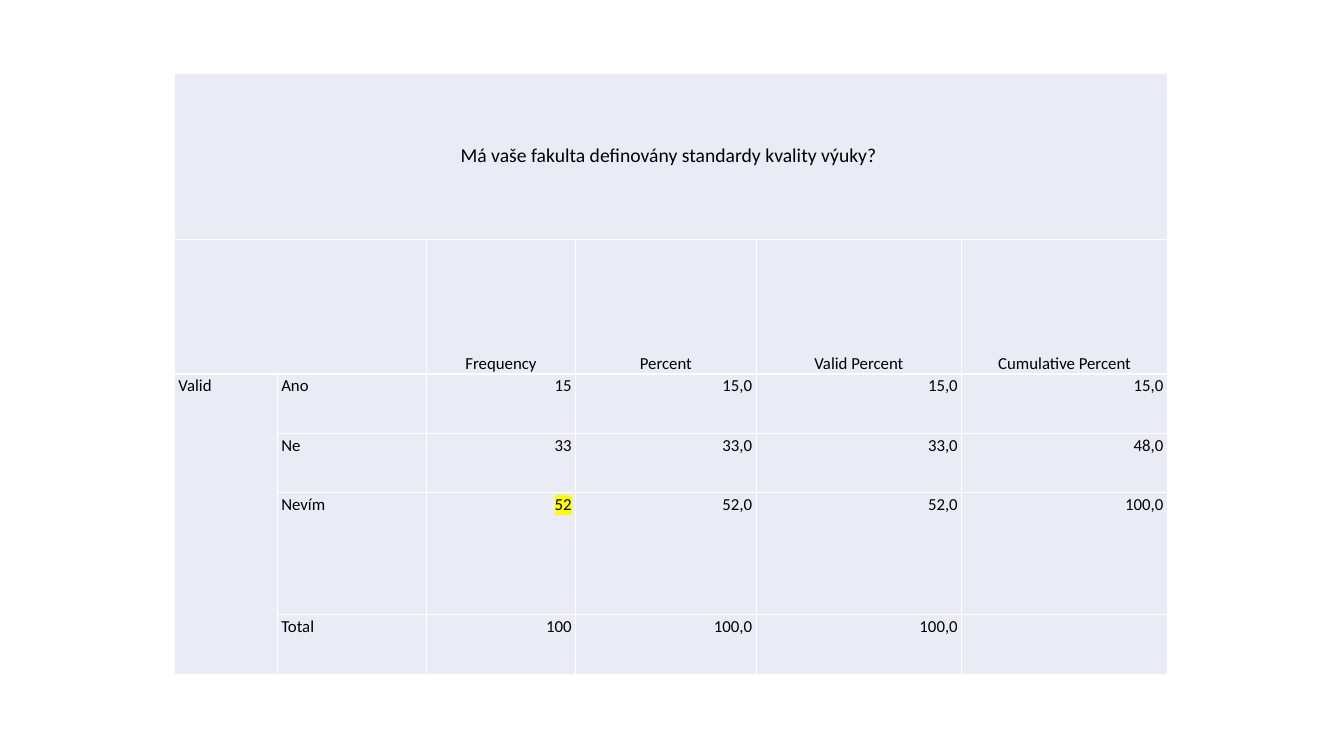
from lxml import etree
from pptx import Presentation
from pptx.dml.color import RGBColor
from pptx.enum.text import MSO_ANCHOR, PP_ALIGN
from pptx.oxml.ns import qn
from pptx.util import Inches, Pt

LEFT, CENTER, RIGHT = PP_ALIGN.LEFT, PP_ALIGN.CENTER, PP_ALIGN.RIGHT
TOP, MIDDLE, BOTTOM = MSO_ANCHOR.TOP, MSO_ANCHOR.MIDDLE, MSO_ANCHOR.BOTTOM
PALE_BLUE = RGBColor(0xE9, 0xEB, 0xF5)
WHITE = RGBColor(0xFF, 0xFF, 0xFF)
BLACK = RGBColor(0x00, 0x00, 0x00)
YELLOW = RGBColor(0xFF, 0xFF, 0x00)

COLUMN_WIDTHS = [1.02, 1.48, 1.48, 1.79, 2.04, 2.04]
ROW_HEIGHTS = [1.65, 1.33, 0.59, 0.59, 1.21, 0.59]
ROWS = [
    ["Má vaše fakulta definovány standardy kvality výuky? ", "", "", "", "", ""],
    ["", "", "Frequency", "Percent", "Valid Percent", "Cumulative Percent"],
    ["Valid", "Ano", "15", "15,0", "15,0", "15,0"],
    ["", "Ne", "33", "33,0", "33,0", "48,0"],
    ["", "Nevím", "52", "52,0", "52,0", "100,0"],
    ["", "Total", "100", "100,0", "100,0", ""],
]
HIGHLIGHTED = (4, 2)


def add_color(parent, color):
    etree.SubElement(parent, qn("a:srgbClr"), val=str(color))


def style_cell(cell):
    properties = cell._tc.get_or_add_tcPr()
    for side in ("a:lnL", "a:lnR", "a:lnT", "a:lnB"):
        border = etree.SubElement(properties, qn(side), w=str(Pt(1)))
        add_color(etree.SubElement(border, qn("a:solidFill")), WHITE)
    cell.fill.solid()
    cell.fill.fore_color.rgb = PALE_BLUE
    cell.margin_left = cell.margin_right = cell.margin_top = cell.margin_bottom = 0


deck = Presentation()
deck.slide_width, deck.slide_height = Inches(13.33), Inches(7.5)
page = deck.slides.add_slide(deck.slide_layouts[6])

# Table frame
table = page.shapes.add_table(
    len(ROWS), len(COLUMN_WIDTHS), Inches(1.73), Inches(0.73),
    Inches(sum(COLUMN_WIDTHS)), Inches(sum(ROW_HEIGHTS))).table
table.first_row = table.horz_banding = False
for column, width in zip(table.columns, COLUMN_WIDTHS):
    column.width = Inches(width)
for row, height in zip(table.rows, ROW_HEIGHTS):
    row.height = Inches(height)

# Merged title, corner and row group
table.cell(0, 0).merge(table.cell(0, 5))
table.cell(1, 0).merge(table.cell(1, 1))
table.cell(2, 0).merge(table.cell(5, 0))

# Cell contents
for row_index, texts in enumerate(ROWS):
    for column_index, text in enumerate(texts):
        cell = table.cell(row_index, column_index)
        style_cell(cell)
        if not text:
            continue
        cell.vertical_anchor = {0: MIDDLE, 1: BOTTOM}.get(row_index, TOP)
        para = cell.text_frame.paragraphs[0]
        if row_index < 2:
            para.alignment = CENTER
        else:
            para.alignment = LEFT if column_index < 2 else RIGHT
        para.line_spacing = Pt(16)
        para.space_after = Pt(8)
        indents = para._p.get_or_add_pPr()
        indents.set("marL", str(Inches(0.04)))
        indents.set("marR", str(Inches(0.04)))
        para.font.name = "Calibri"
        para.font.size = Pt(14 if row_index == 0 else 12)
        para.font.color.rgb = BLACK
        span = para.add_run()
        span.text = text
        if (row_index, column_index) == HIGHLIGHTED:
            run_properties = span._r.get_or_add_rPr()
            add_color(etree.SubElement(run_properties, qn("a:highlight")), YELLOW)

deck.save("out.pptx")
